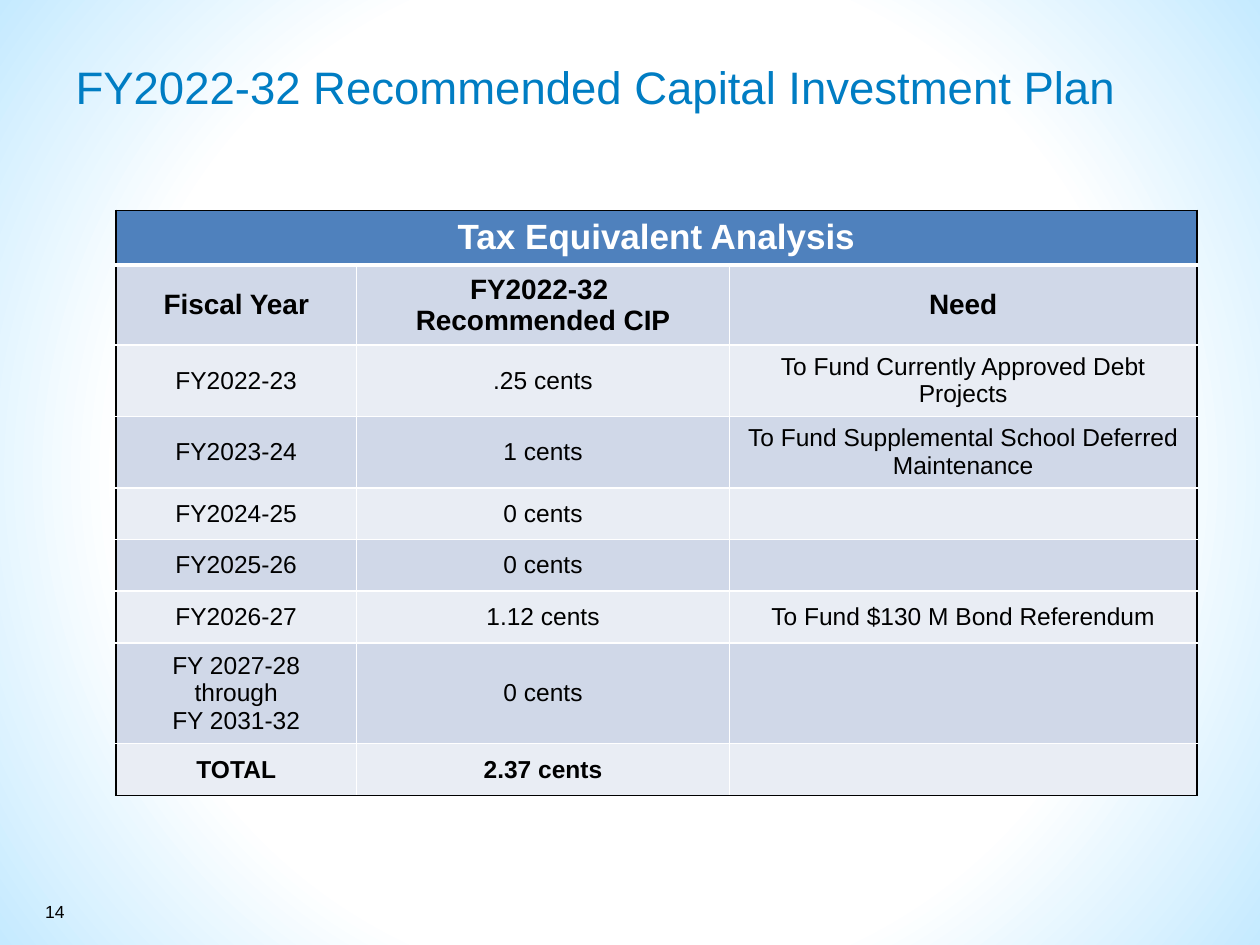
from lxml import etree
from pptx import Presentation
from pptx import util as u
from pptx.dml import color
from pptx.enum import text
from pptx.oxml import ns

WIDTH, HEIGHT = 10, 7.5
FONT = "Arial"
BLACK, WHITE = "000000", "FFFFFF"
HEADER_FILL, BANDS = "4F81BD", ("E9EDF4", "D0D8E8")
COLUMN_WIDTHS = (1.91, 2.96, 3.71)
ROW_HEIGHT = 0.41
ROWS = (
    ("Tax Equivalent Analysis", "", ""),
    ("Fiscal Year", "FY2022-32 \nRecommended CIP", "Need"),
    ("FY2022-23", ".25 cents", "To Fund Currently Approved Debt Projects"),
    ("FY2023-24", "1 cents", "To Fund Supplemental School Deferred Maintenance"),
    ("FY2024-25", "0 cents", ""),
    ("FY2025-26", "0 cents", ""),
    ("FY2026-27", "1.12 cents", "To Fund $130 M Bond Referendum"),
    ("FY 2027-28 through\nFY 2031-32", "0 cents", ""),
    ("TOTAL", "2.37 cents", ""),
)


def rgb(value):
    return color.RGBColor.from_string(value)


def add_child(parent, tag, **attributes):
    return etree.SubElement(parent, ns.qn(tag), attributes)


def place(shape, left, top, width, height):
    shape.left, shape.top = u.Inches(left), u.Inches(top)
    shape.width, shape.height = u.Inches(width), u.Inches(height)


def write(frame, content, size, ink, bold=False, align=text.PP_ALIGN.LEFT):
    for index, line in enumerate(content.split("\n")):
        paragraph = frame.add_paragraph() if index else frame.paragraphs[0]
        paragraph.alignment = align
        paragraph.font.size = u.Pt(size)
        if line:
            run = paragraph.add_run()
            run.text = line
            run.font.name = FONT
            run.font.size = u.Pt(size)
            run.font.bold = bold
            run.font.color.rgb = rgb(ink)


def paint_background(slide):
    fill = slide.background.fill
    fill.gradient()
    for stop, position, tint in zip(fill.gradient_stops, (0.65, 1), (WHITE, "C5EAFF")):
        stop.position = position
        stop.color.rgb = rgb(tint)
    linear = next(slide.element.iter(ns.qn("a:lin")))
    gradient = linear.getparent()
    gradient.remove(linear)
    circle = add_child(gradient, "a:path", path="circle")
    add_child(circle, "a:fillToRect", l="50000", t="50000", r="50000", b="50000")


def add_title(slide):
    title = slide.shapes.title
    place(title, 0.5, 0.42, 9, 0.75)
    frame = title.text_frame
    frame.auto_size = text.MSO_AUTO_SIZE.NONE
    frame.vertical_anchor = text.MSO_ANCHOR.TOP
    write(frame, "FY2022-32 Recommended Capital Investment Plan", 26, "007DC3")


def add_page_number(slide):
    box = slide.shapes.add_textbox(*map(u.Inches, (0.26, 7.1, 0.66, 0.27)))
    box.text_frame.word_wrap = True
    write(box.text_frame, "14", 10, BLACK)


def add_border(cell, side, ink, points):
    line = add_child(cell._tc.get_or_add_tcPr(), f"a:ln{side}", w=str(u.Pt(points)))
    add_child(add_child(line, "a:solidFill"), "a:srgbClr", val=ink)


def format_cell(cell, row, column, content):
    header = row == 0
    last_row, last_column = len(ROWS) - 1, len(COLUMN_WIDTHS) - 1
    outer = {
        "L": column == 0,
        "R": header or column == last_column,
        "T": header,
        "B": row == last_row,
    }
    for side, is_outer in outer.items():
        points = 3 if header and side == "B" else 1
        add_border(cell, side, BLACK if is_outer else WHITE, points)
    cell.fill.solid()
    cell.fill.fore_color.rgb = rgb(HEADER_FILL if header else BANDS[row % 2])
    cell.vertical_anchor = text.MSO_ANCHOR.MIDDLE
    size = {0: 20, 1: 16}.get(row, 14)
    write(cell.text_frame, content, size, WHITE if header else BLACK,
          row in (0, 1, last_row), text.PP_ALIGN.CENTER)


def add_tax_table(slide):
    frame = slide.shapes.add_table(
        len(ROWS), len(COLUMN_WIDTHS), u.Inches(0.92), u.Inches(1.67),
        u.Inches(sum(COLUMN_WIDTHS)), u.Inches(ROW_HEIGHT * len(ROWS)))
    table = frame.table
    for column, width in zip(table.columns, COLUMN_WIDTHS):
        column.width = u.Inches(width)
    for row in table.rows:
        row.height = u.Inches(ROW_HEIGHT)
    table.cell(0, 0).merge(table.cell(0, len(COLUMN_WIDTHS) - 1))
    for row, contents in enumerate(ROWS):
        for column, content in enumerate(contents):
            cell = table.cell(row, column)
            if not cell.is_spanned:
                format_cell(cell, row, column, content)


def main():
    deck = Presentation()
    deck.slide_width, deck.slide_height = u.Inches(WIDTH), u.Inches(HEIGHT)
    slide = deck.slides.add_slide(deck.slide_layouts.get_by_name("Title Only"))
    paint_background(slide)
    add_title(slide)
    add_page_number(slide)
    add_tax_table(slide)
    deck.save("out.pptx")


if __name__ == "__main__":
    main()
